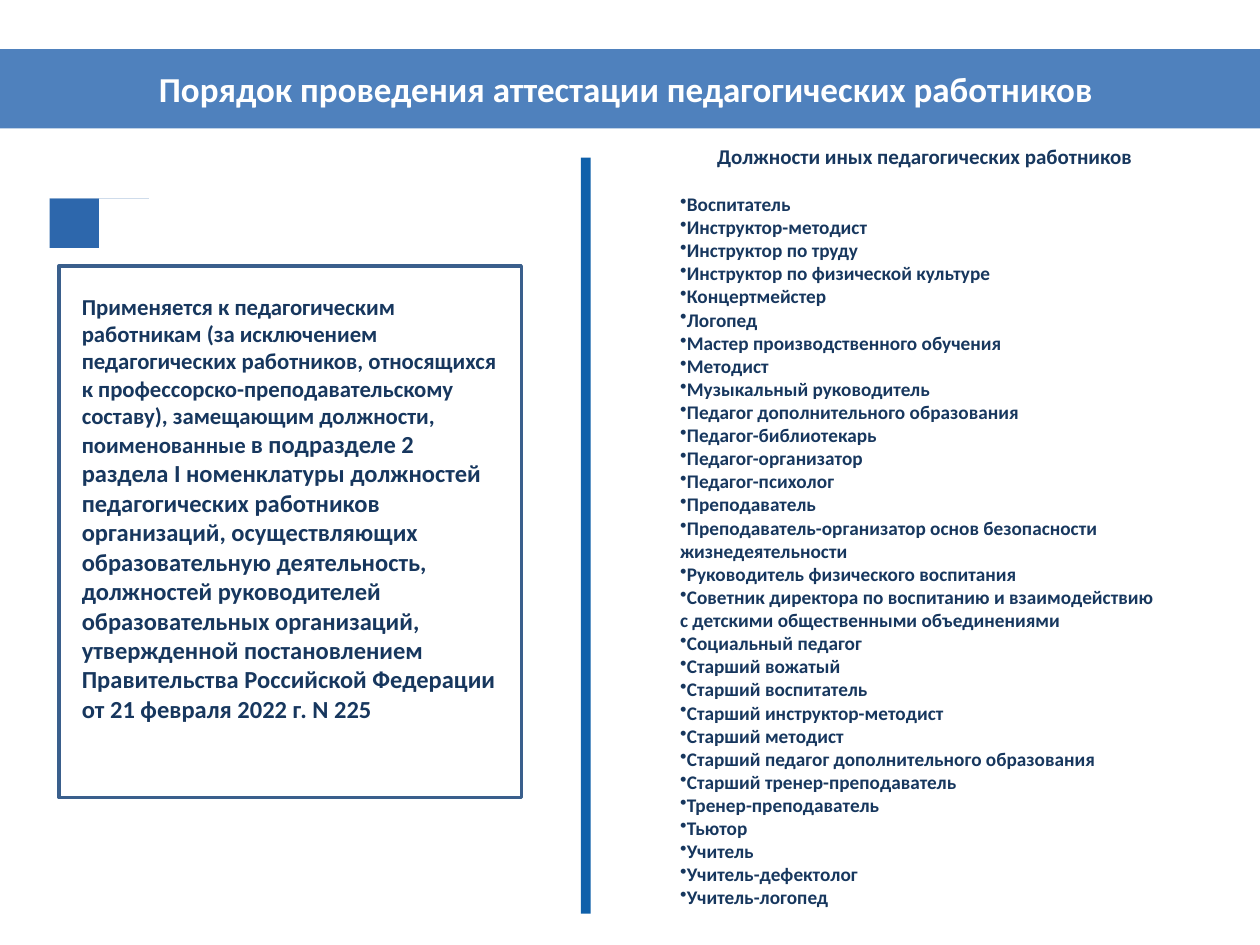
"""Build the slide on the certification procedure for teaching staff."""
from pptx import Presentation
from pptx.dml.color import RGBColor
from pptx.enum import shapes, text
from pptx.oxml import parse_xml
from pptx.oxml.ns import nsdecls
from pptx.util import Cm, Pt

FONT = "Calibri"
WHITE = RGBColor(0xFF, 0xFF, 0xFF)
NAVY = RGBColor(0x17, 0x37, 0x5E)
BAND = RGBColor(0x4F, 0x81, 0xBD)
FRAME = RGBColor(0x3A, 0x5F, 0x8C)
BUBBLE = RGBColor(0x2D, 0x67, 0xAC)
DIVIDER = RGBColor(0x0F, 0x60, 0xAA)

TITLE = "Порядок проведения аттестации педагогических работников "
SCOPE = [
    ("Применяется к педагогическим работникам (за исключением педагогических "
     "работников, относящихся к профессорско-преподавательскому составу), "
     "замещающим должности, поименованные ", 13),
    ("в подразделе 2 раздела I номенклатуры должностей педагогических работников "
     "организаций, осуществляющих образовательную деятельность, должностей "
     "руководителей образовательных организаций, утвержденной постановлением "
     "Правительства Российской Федерации от 21 февраля 2022 г. N 225", 14),
]
HEADING = "Должности иных педагогических работников"
POSITIONS = [
    ("Воспитатель",),
    ("Инструктор-методист",),
    ("Инструктор по труду",),
    ("Инструктор по физической культуре",),
    ("Концертмейстер",),
    ("Логопед",),
    ("Мастер производственного обучения",),
    ("Методист",),
    ("Музыкальный руководитель",),
    ("Педагог дополнительного образования",),
    ("Педагог-библиотекарь",),
    ("Педагог-организатор",),
    ("Педагог-психолог",),
    ("Преподаватель",),
    ("Преподаватель-организатор основ безопасности ", "жизнедеятельности"),
    ("Руководитель физического воспитания",),
    ("Советник директора по воспитанию и взаимодействию ",
     "с детскими общественными объединениями"),
    ("Социальный педагог",),
    ("Старший вожатый",),
    ("Старший воспитатель",),
    ("Старший инструктор-методист",),
    ("Старший методист",),
    ("Старший педагог дополнительного образования",),
    ("Старший тренер-преподаватель",),
    ("Тренер-преподаватель",),
    ("Тьютор",),
    ("Учитель",),
    ("Учитель-дефектолог",),
    ("Учитель-логопед",),
]
BUBBLE_OUTLINE = [
    (2.77, 3.58), (1.19, 3.58), (1.09, 3.59), (1.04, 3.61), (1.01, 3.68),
    (0.99, 3.76), (0.99, 4.83), (1.01, 4.9), (1.04, 4.95), (1.09, 4.99),
    (1.19, 5), (1.8, 5), (2.08, 5.13), (2.49, 5.36), (2.49, 5), (2.77, 5),
    (2.87, 4.99), (2.92, 4.95), (2.97, 4.9), (2.97, 3.76), (2.95, 3.68),
    (2.92, 3.61), (2.87, 3.59),
]
BAR_RIGHT, BAR_HEIGHT = 2.74, 0.15
BARS = [(1.22, 3.89), (1.22, 4.19), (1.75, 4.5)]


def style(sp, fill=None, line=None):
    sp.shadow.inherit = False
    if fill is None:
        sp.fill.background()
    else:
        sp.fill.solid()
        sp.fill.fore_color.rgb = fill
    if line is None:
        sp.line.fill.background()
    else:
        sp.line.color.rgb = line
        sp.line.width = Pt(2)


def set_font(font, size, color=NAVY):
    font.name, font.size, font.bold = FONT, Pt(size), True
    font.color.rgb = color


def add_rect(s, box, **look):
    sp = s.shapes.add_shape(shapes.MSO_SHAPE.RECTANGLE, *map(Cm, box))
    style(sp, **look)


def add_text(s, box):
    tf = s.shapes.add_textbox(*map(Cm, box)).text_frame
    tf.word_wrap = True
    return tf


def add_outline(group, outlines, color):
    start, *rest = outlines[0]
    fb = group.shapes.build_freeform(*start, scale=Cm(1))
    fb.add_line_segments(rest)
    for start, *rest in outlines[1:]:
        fb.move_to(*start)
        fb.add_line_segments(rest)
    style(fb.convert_to_shape(), fill=color)


def add_title(s):
    sp = s.shapes.title
    sp.left, sp.top, sp.width, sp.height = map(Cm, (0, 0.99, 25.4, 1.6))
    sp.fill.solid()
    sp.fill.fore_color.rgb = BAND
    tf = sp.text_frame
    tf.text = TITLE
    tf.vertical_anchor = text.MSO_ANCHOR.MIDDLE
    p = tf.paragraphs[0]
    p.alignment = text.PP_ALIGN.CENTER
    p.space_before = Pt(1)
    set_font(p.font, 20, WHITE)


def add_scope(s):
    add_rect(s, (1.19, 5.36, 9.32, 10.72), line=FRAME)
    p = add_text(s, (1.4, 5.77, 8.94, 10.24)).paragraphs[0]
    p.space_before = Pt(3)
    for words, size in SCOPE:
        r = p.add_run()
        r.text = words
        set_font(r.font, size)


def add_icon(s):
    group = s.shapes.add_group_shape()
    add_outline(group, [BUBBLE_OUTLINE], BUBBLE)
    bars = [[(x, y), (BAR_RIGHT, y), (BAR_RIGHT, y + BAR_HEIGHT), (x, y + BAR_HEIGHT)]
            for x, y in BARS]
    add_outline(group, bars, WHITE)


def add_positions(s):
    tf = add_text(s, (12.5, 2.77, 12.29, 16.28))
    p = tf.paragraphs[0]
    p.text = HEADING
    p.alignment = text.PP_ALIGN.CENTER
    p.space_after = Pt(13.4)
    set_font(p.font, 12)
    for lines in POSITIONS:
        for i, line in enumerate(lines):
            p = tf.add_paragraph()
            p.text = line
            p.alignment = text.PP_ALIGN.JUSTIFY
            set_font(p.font, 11)
            pPr = p._p.get_or_add_pPr()
            pPr.set("marL", str(Cm(0.96)))
            pPr.set("indent", "0")
            if i == 0:
                bullet = parse_xml(f'<a:buChar {nsdecls("a")} char="•"/>')
                pPr.insert_element_before(bullet, "a:tabLst", "a:defRPr", "a:extLst")


def main():
    prs = Presentation()
    prs.slide_width, prs.slide_height = Cm(25.4), Cm(19.05)
    s = prs.slides.add_slide(prs.slide_layouts[5])
    add_title(s)
    add_scope(s)
    add_icon(s)
    add_positions(s)
    add_rect(s, (11.71, 3.18, 0.2, 15.24), fill=DIVIDER)
    prs.save("out.pptx")


if __name__ == "__main__":
    main()
